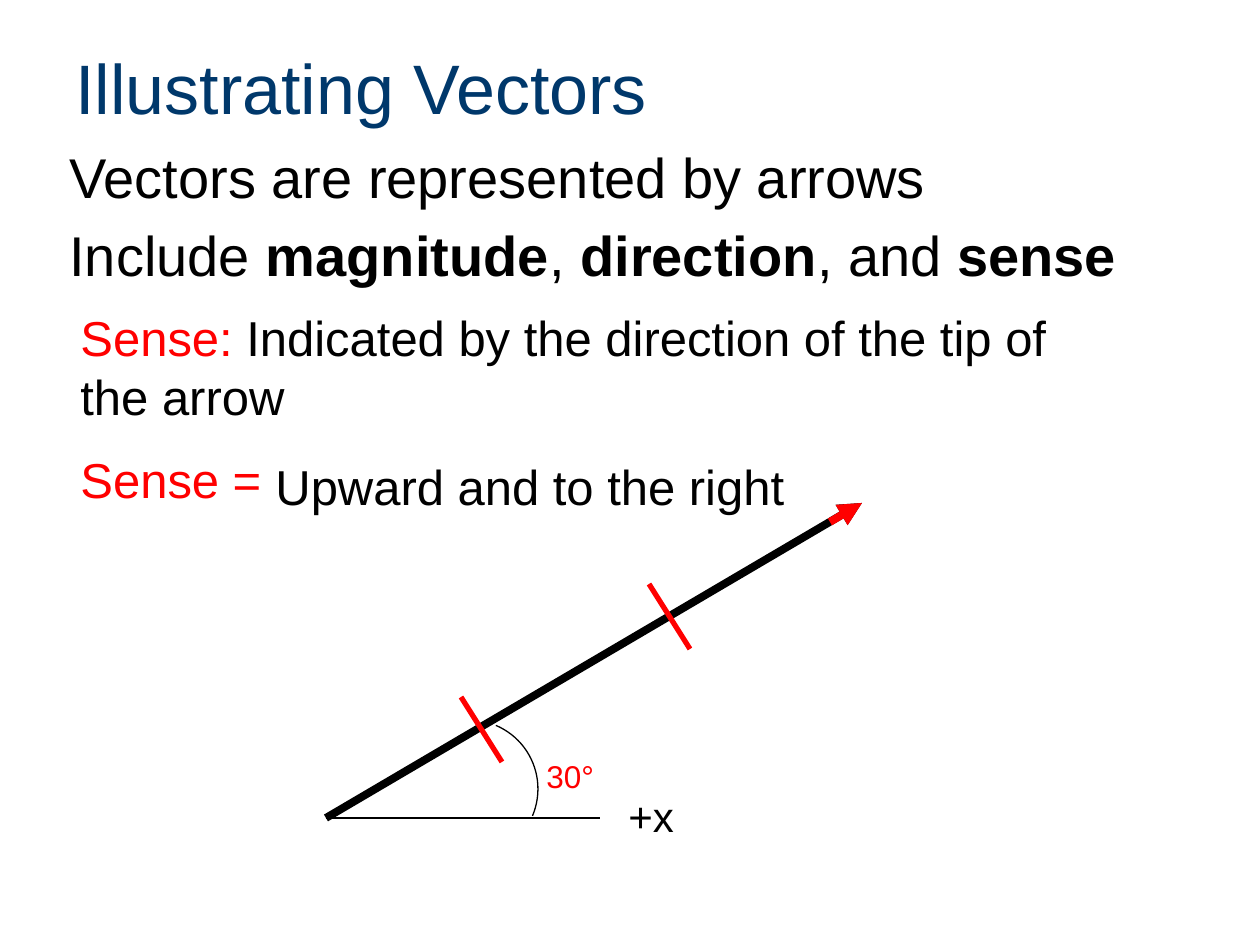
from lxml import etree
from pptx import Presentation
from pptx.dml.color import RGBColor
from pptx.enum.shapes import MSO_CONNECTOR, MSO_SHAPE
from pptx.enum.text import MSO_ANCHOR
from pptx.oxml.ns import qn
from pptx.util import Emu, Pt

STRAIGHT = MSO_CONNECTOR.STRAIGHT
ARC = MSO_SHAPE.ARC
TOP, MIDDLE = MSO_ANCHOR.TOP, MSO_ANCHOR.MIDDLE

NAVY = RGBColor(0x00, 0x38, 0x6B)
BLACK = RGBColor(0x00, 0x00, 0x00)
RED = RGBColor(0xFF, 0x00, 0x00)
FONT = "Arial"
PX_PER_INCH = 126


def px(length):
    return Emu(round(length * 914400 / PX_PER_INCH))


def set_space_before(paragraph, percent):
    """Space above a paragraph, relative to its line height."""
    spacing = etree.Element(qn("a:spcBef"))
    etree.SubElement(spacing, qn("a:spcPct"), val=str(percent * 1000))
    paragraph._p.get_or_add_pPr().insert(0, spacing)


def add_text(slide, box, paragraphs, size, space=0, anchor=TOP, wrap=True):
    """Each paragraph is a list of (text, colour, bold) runs."""
    frame = slide.shapes.add_textbox(*map(px, box)).text_frame
    frame.word_wrap = wrap
    frame.vertical_anchor = anchor
    for index, runs in enumerate(paragraphs):
        paragraph = frame.paragraphs[0] if index == 0 else frame.add_paragraph()
        if space:
            set_space_before(paragraph, space)
        for text, colour, bold in runs:
            run = paragraph.add_run()
            run.text = text
            run.font.color.rgb = colour
            for name, value in {"name": FONT, "size": Pt(size), "bold": bold}.items():
                setattr(run.font, name, value)


def add_line(slide, start, end, colour, width, arrow=False):
    line = slide.shapes.add_connector(STRAIGHT, *map(px, (*start, *end)))
    line.line.color.rgb = colour
    line.line.width = Pt(width)
    if arrow:
        etree.SubElement(line.line._get_or_add_ln(), qn("a:tailEnd"), type="triangle")
    etree.SubElement(line._element.spPr, qn("a:effectLst"))


def add_heading(slide, box):
    left, top, width, height = box
    add_text(slide, (left, top, width, 98),
             [[("Illustrating Vectors", NAVY, False)]], 40, anchor=MIDDLE)
    statements = [
        [("Vectors are represented by arrows", BLACK, False)],
        [("Include ", BLACK, False), ("magnitude", BLACK, True),
         (", ", BLACK, False), ("direction", BLACK, True),
         (", and ", BLACK, False), ("sense", BLACK, True)],
    ]
    add_text(slide, (left - 6, top + 98, width, height - 98), statements, 32, space=20)


def add_sense(slide, box):
    left, top, width, height = box
    definition = [("Sense:", RED, False),
                  (" Indicated by the direction of the tip of the arrow", BLACK, False)]
    add_text(slide, box, [definition, [("Sense =", RED, False)]], 28, space=50)
    add_text(slide, (left + 195, top + 149, 536, 72),
             [[("Upward and to the right", BLACK, False)]], 28, wrap=False)


def add_vector_diagram(slide, box):
    """Vector along the diagonal of the box, its angle at the lower left."""
    left, top, width, height = box
    origin, tip = (left, top + height), (left + width, top)
    add_line(slide, origin, tip, BLACK, 4.5, arrow=True)
    for x, y in ((135, 194), (323, 81)):
        add_line(slide, (left + x, top + y), (left + x + 41, top + y + 65), RED, 3)
    add_line(slide, origin, (left + 274, origin[1]), BLACK, 0.75)

    radius = 69
    centre_x, centre_y = left + 143, top + 286
    angle = slide.shapes.add_shape(ARC, px(centre_x - radius), px(centre_y - radius),
                                   px(2 * radius), px(2 * radius))
    angle.rotation = 23
    angle.shadow.inherit = False
    angle.fill.background()
    angle.line.color.rgb = BLACK
    angle.line.width = Pt(0.75)

    add_text(slide, (left + 208, top + 248, 73, 50), [[("30°", RED, False)]], 18)
    add_line(slide, (tip[0] - 32, tip[1] + 19), tip, RED, 4.5, arrow=True)
    add_text(slide, (left + 290, top + 281, 102, 63),
             [[("+x", BLACK, False)]], 24, space=50)


def main():
    presentation = Presentation()
    presentation.slide_width, presentation.slide_height = px(1260), px(945)
    slide = presentation.slides.add_slide(presentation.slide_layouts[6])
    add_heading(slide, (63, 38, 1134, 245))
    add_vector_diagram(slide, (326, 503, 536, 315))
    add_sense(slide, (68, 301, 1067, 219))
    presentation.save("out.pptx")


if __name__ == "__main__":
    main()
